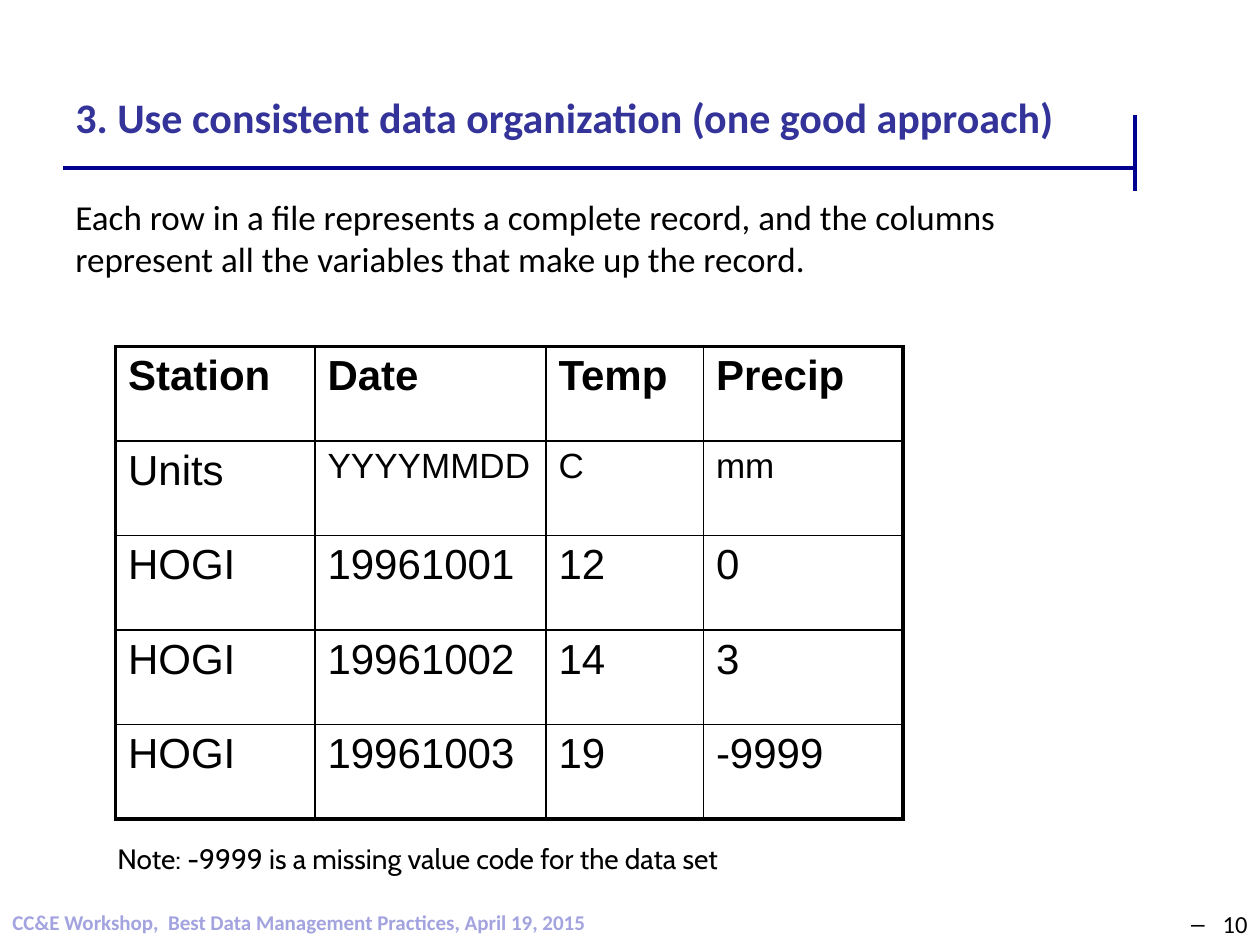
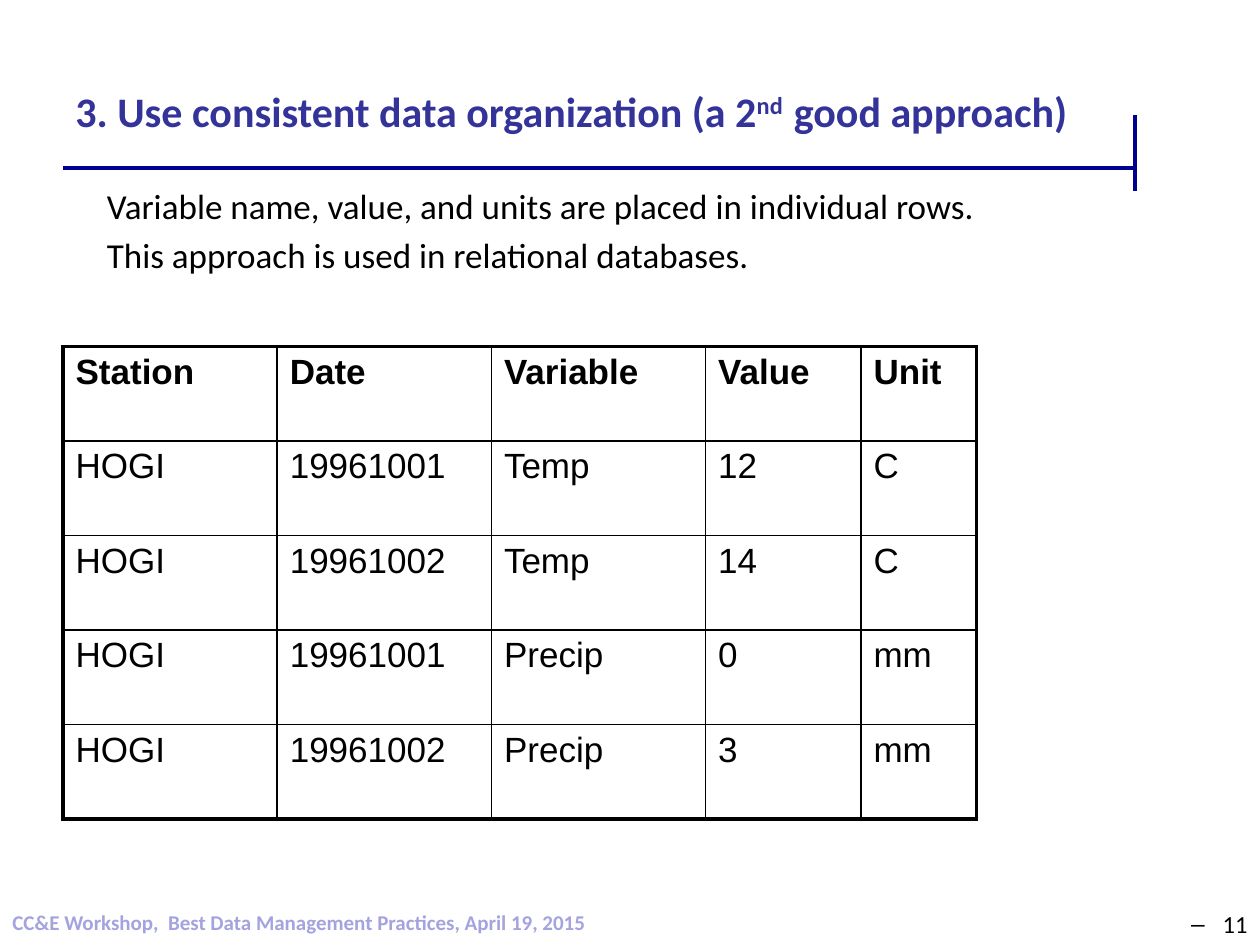
from dataclasses import dataclass

from lxml import etree
from pptx import Presentation
from pptx.dml.color import RGBColor
from pptx.enum.shapes import MSO_CONNECTOR
from pptx.enum.text import MSO_ANCHOR, PP_ALIGN
from pptx.oxml.ns import qn
from pptx.slide import Slide
from pptx.table import _Cell
from pptx.util import Inches, Length, Pt

STRAIGHT = MSO_CONNECTOR.STRAIGHT
TOP, MIDDLE = MSO_ANCHOR.TOP, MSO_ANCHOR.MIDDLE
LEFT, RIGHT = PP_ALIGN.LEFT, PP_ALIGN.RIGHT

BLACK = RGBColor(0x00, 0x00, 0x00)
NAVY = RGBColor(0x00, 0x00, 0x90)
TITLE_BLUE = RGBColor(0x33, 0x33, 0x99)
FOOTER_LILAC = RGBColor(0xA3, 0xA3, 0xE0)

SLIDE_WIDTH, SLIDE_HEIGHT = Inches(10), Inches(7.5)
GRID_COLUMNS = 120  # the slide is a grid of 120 by 90 square units
UNIT = SLIDE_WIDTH / GRID_COLUMNS

BODY_FONT, TABLE_FONT, NOTE_FONT = "Calibri", "Arial", "Cabin"
FOOTER = "CC&E Workshop,  Best Data Management Practices, April 19, 2015"
RULES = ((108.1, 11, 108.1, 18.2), (6, 16, 108, 16))
TABLE_TOP, ROW_HEIGHT = 33, 9
OUTER_BORDER, INNER_BORDER = 2.25, 1


@dataclass(frozen=True)
class Area:
    """A rectangle in grid units."""
    left: float
    top: float
    width: float
    height: float


@dataclass(frozen=True)
class Span:
    text: str
    superscript: bool = False


@dataclass(frozen=True)
class TextBlock:
    area: Area
    paragraphs: tuple[str, ...]
    size: float = 20
    font: str = BODY_FONT


@dataclass(frozen=True)
class DataTable:
    left: float
    column_widths: tuple[float, ...]
    rows: tuple[tuple[str, ...], ...]
    size: float
    small_cells: tuple[tuple[int, int], ...] = ()
    small_size: float = 20


@dataclass(frozen=True)
class Page:
    number: int
    title: tuple[Span, ...]
    title_top: float
    blocks: tuple[TextBlock, ...]
    table: DataTable


PAGES = (
    Page(
        number=10,
        title=(Span("3. Use consistent data organization (one good approach)"),),
        title_top=3.6,
        blocks=(
            TextBlock(Area(6, 18, 93, 15.6), (
                "Each row in a file represents a complete record, and the columns "
                "represent all the variables that make up the record.",)),
            TextBlock(Area(10, 79.6, 64, 4.4),
                      ("Note: -9999 is a missing value code for the data set",),
                      size=16, font=NOTE_FONT),
        ),
        table=DataTable(
            left=11, column_widths=(19, 22, 15, 19), size=24,
            rows=(
                ("Station", "Date", "Temp", "Precip"),
                ("Units", "YYYYMMDD", "C", "mm"),
                ("HOGI", "19961001", "12", "0"),
                ("HOGI", "19961002", "14", "3"),
                ("HOGI", "19961003", "19", "-9999"),
            ),
            small_cells=((1, 1), (1, 2), (1, 3)),
        ),
    ),
    Page(
        number=11,
        title=(Span("3. Use consistent data organization (a 2"),
               Span("nd  ", superscript=True), Span("good approach)")),
        title_top=3,
        blocks=(
            TextBlock(Area(9, 17, 90, 10), (
                "Variable name, value, and units are placed in individual rows.",
                "This approach is used in relational databases.")),
        ),
        table=DataTable(
            left=6, column_widths=(20.4, 20.4, 20.4, 14.8, 11), size=20,
            rows=(
                ("Station", "Date", "Variable", "Value", "Unit"),
                ("HOGI", "19961001", "Temp", "12", "C"),
                ("HOGI", "19961002", "Temp", "14", "C"),
                ("HOGI", "19961001", "Precip", "0", "mm"),
                ("HOGI", "19961002", "Precip", "3", "mm"),
            ),
        ),
    ),
)


def grid(units: float) -> Length:
    return Length(round(units * UNIT))


def place(area: Area) -> tuple[Length, ...]:
    return tuple(map(grid, (area.left, area.top, area.width, area.height)))


def write_text(frame, paragraphs: tuple[tuple[Span, ...], ...], *, size: float,
               font: str = BODY_FONT, color: RGBColor = BLACK, bold: bool = False,
               align: PP_ALIGN = LEFT, anchor: MSO_ANCHOR = TOP, bullet: str = "") -> None:
    frame.word_wrap = True
    frame.vertical_anchor = anchor
    for index, spans in enumerate(paragraphs):
        para = frame.add_paragraph() if index else frame.paragraphs[0]
        para.alignment = align
        if index:
            para.space_before = Pt(size * 0.2)
        if bullet:
            add_bullet(para, bullet)
        for part in spans:
            span = para.add_run()
            span.text = part.text
            span.font.name, span.font.size = font, Pt(size)
            span.font.bold, span.font.color.rgb = bold, color
            if part.superscript:
                span._r.get_or_add_rPr().set("baseline", "30000")


def add_bullet(para, symbol: str) -> None:
    properties = para._p.get_or_add_pPr()
    indent = Inches(0.25)
    properties.set("marL", str(indent))
    properties.set("indent", str(-indent))
    etree.SubElement(properties, qn("a:buFont")).set("typeface", TABLE_FONT)
    etree.SubElement(properties, qn("a:buChar")).set("char", symbol)


def add_text(slide: Slide, area: Area, *paragraphs: tuple[Span, ...], **style) -> None:
    box = slide.shapes.add_textbox(*place(area))
    write_text(box.text_frame, paragraphs, **style)


def add_rule(slide: Slide, ends: tuple[float, ...]) -> None:
    rule = slide.shapes.add_connector(STRAIGHT, *map(grid, ends))
    rule.line.color.rgb, rule.line.width = NAVY, Pt(2.75)
    etree.SubElement(rule._element.spPr, qn("a:effectLst"))


def set_borders(cell: _Cell, outer: dict[str, bool]) -> None:
    """Border each side, heavier where the side is on the table's edge."""
    properties = cell._tc.get_or_add_tcPr()
    for side, is_outer in outer.items():
        width = Pt(OUTER_BORDER if is_outer else INNER_BORDER)
        line = etree.SubElement(properties, qn(f"a:ln{side}"), w=str(width))
        fill = etree.SubElement(line, qn("a:solidFill"))
        etree.SubElement(fill, qn("a:srgbClr")).set("val", str(BLACK))


def add_data_table(slide: Slide, data: DataTable) -> None:
    last_row, last_column = len(data.rows) - 1, len(data.column_widths) - 1
    area = Area(data.left, TABLE_TOP, sum(data.column_widths), ROW_HEIGHT * len(data.rows))
    table = slide.shapes.add_table(last_row + 1, last_column + 1, *place(area)).table
    table.first_row = table.horz_banding = False
    for column, width in zip(table.columns, data.column_widths):
        column.width = grid(width)
    for row_index, row in enumerate(data.rows):
        table.rows[row_index].height = grid(ROW_HEIGHT)
        for column_index, text in enumerate(row):
            cell = table.cell(row_index, column_index)
            set_borders(cell, {"L": column_index == 0, "R": column_index == last_column,
                               "T": row_index == 0, "B": row_index == last_row})
            cell.fill.background()
            is_small = (row_index, column_index) in data.small_cells
            write_text(cell.text_frame, ((Span(text),),), font=TABLE_FONT,
                       size=data.small_size if is_small else data.size,
                       bold=row_index == 0)


def add_frame(slide: Slide, page: Page) -> None:
    """Draw the rules, footer, page number and title."""
    for ends in RULES:
        add_rule(slide, ends)
    add_text(slide, Area(0, 86, 59, 4), (Span(FOOTER),),
             size=12, color=FOOTER_LILAC, bold=True)
    add_text(slide, Area(92, 86, 28, 4), (Span(str(page.number)),),
             size=14, align=RIGHT, bullet="–")
    add_text(slide, Area(6, page.title_top, 108, 15), page.title,
             size=24, color=TITLE_BLUE, bold=True, anchor=MIDDLE)


def main() -> None:
    deck = Presentation()
    deck.slide_width, deck.slide_height = SLIDE_WIDTH, SLIDE_HEIGHT
    for page in PAGES:
        slide = deck.slides.add_slide(deck.slide_layouts[6])
        add_frame(slide, page)
        add_data_table(slide, page.table)
        for block in page.blocks:
            add_text(slide, block.area, *((Span(text),) for text in block.paragraphs),
                     size=block.size, font=block.font)
    deck.save("out.pptx")


if __name__ == "__main__":
    main()
